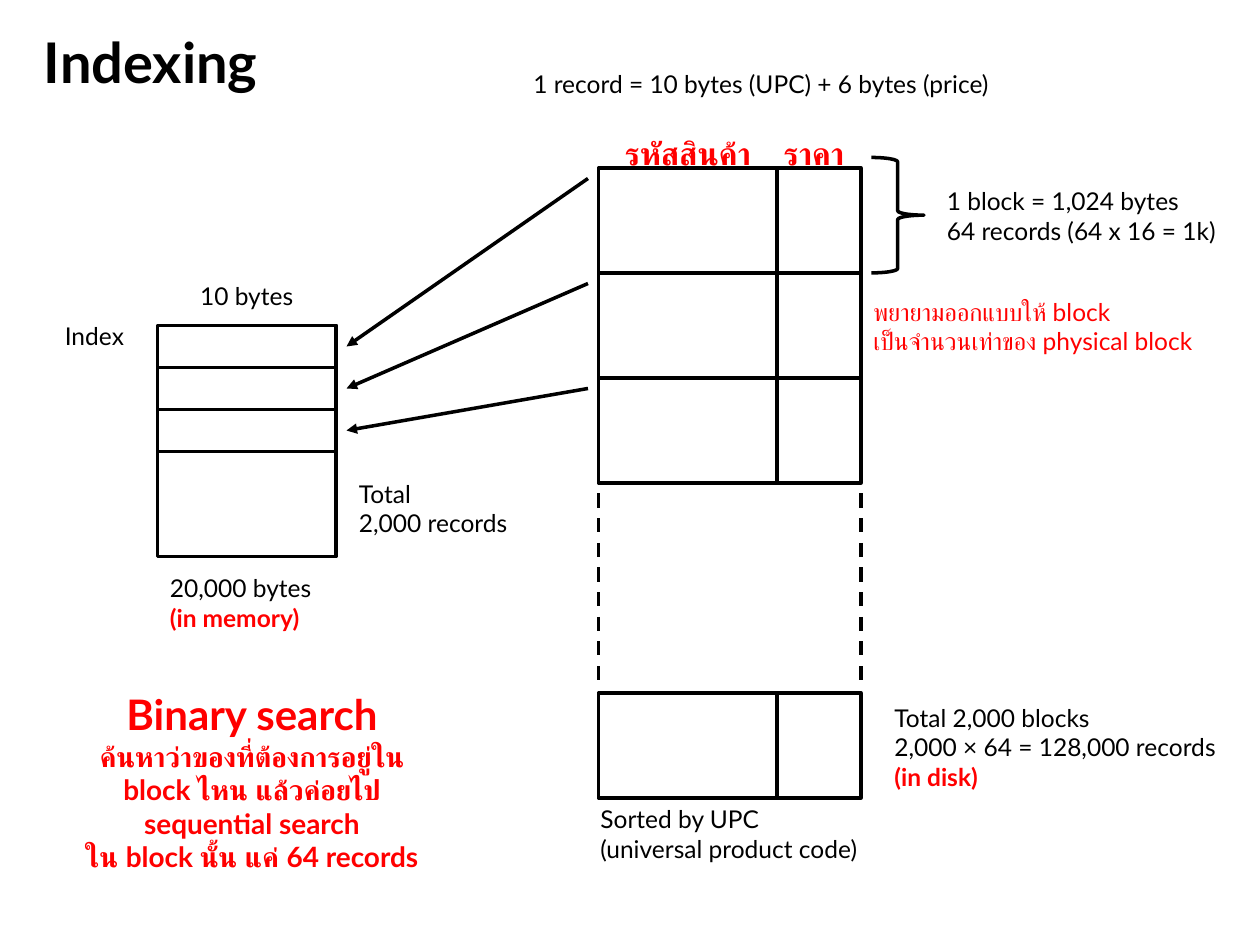
from pptx import Presentation
from pptx import util as u
from pptx.dml.color import RGBColor
from pptx.enum import dml, shapes, text
from pptx.oxml.ns import qn
from lxml import etree

THEME = {
    "font": "Lato", "ink": RGBColor(0, 0, 0), "red": RGBColor(255, 0, 0), "line": 2,
    "styles": {  # name: (size, colour, bold)
        "title": (32, "ink", True),
        "body": (14, "ink", False),
        "note": (14, "red", False),
        "place": (14, "red", True),
        "header": (18, "red", True),
        "method": (24, "red", True),
        "detail": (16, "red", True),
    },
}
LEFT, CENTER = text.PP_ALIGN.LEFT, text.PP_ALIGN.CENTER

# Text: (left, top, width, height), alignment, paragraphs of (style, line)
TEXTS = [
    ((18, 12, 684, 46), LEFT, [[("title", "Indexing")]]),
    ((258, 36, 354, 24), CENTER, [[("body", "1 record = 10 bytes (UPC) + 6 bytes (price)")]]),
    ((534, 103, 174, 41), LEFT, [[("body", "1 block = 1,024 bytes"),
                                  ("body", "64 records (64 x 16 = 1k)")]]),
    ((504, 398, 210, 58), LEFT, [[("body", "Total 2,000 blocks"),
                                  ("body", "2,000 × 64 = 128,000 records"),
                                  ("place", "(in disk)")]]),
    ((336, 456, 204, 41), LEFT, [[("body", "Sorted by UPC"),
                                  ("body", "(universal product code)")]]),
    ((90, 157, 102, 24), CENTER, [[("body", "10 bytes")]]),
    ((18, 180, 72, 24), CENTER, [[("body", "Index")]]),
    ((198, 270, 120, 41), LEFT, [[("body", "Total"), ("body", "2,000 records")]]),
    ((90, 324, 114, 41), LEFT, [[("body", "20,000 bytes"), ("place", "(in memory)")]]),
    ((30, 390, 228, 114), CENTER, [
        [("method", "Binary search")],
        [("detail", "ค้นหาว่าของที่ต้องการอยู่ใน block ไหน แล้วค่อยไป sequential search"),
         ("detail", "ใน block นั้น แค่ 64 records")]]),
    ((348, 73, 90, 29), CENTER, [[("header", "รหัสสินค้า")]]),
    ((420, 73, 90, 29), CENTER, [[("header", "ราคา")]]),
    ((492, 166, 222, 41), LEFT, [[("note", "พยายามออกแบบให้ block")],
                                 [("note", "เป็นจำนวนเท่าของ physical block")]]),
]

# Diagram geometry
CODE_W, PRICE_W, BLOCK_H = 102, 48, 60
BLOCK_X, BLOCK_Y, LAST_Y = 342, 96, 396
INDEX_X, INDEX_Y, INDEX_H, ROW_H = 90, 186, 132, 24
LINKS = 3
GAP = 6


def pts(*values):
    return [u.Pt(v) for v in values]


def apply(obj, values):
    for name, value in values.items():
        setattr(obj, name, value)


def add_outline(s, kind, *box):
    sp = s.shapes.add_shape(kind, *pts(*box))
    sp.shadow.inherit = False
    sp.fill.background()
    sp.line.color.rgb = THEME["ink"]
    sp.line.width = u.Pt(THEME["line"])


def add_line(s, *ends, dashed=False, arrow=False):
    cx = s.shapes.add_connector(shapes.MSO_CONNECTOR.STRAIGHT, *pts(*ends))
    cx.line.color.rgb = THEME["ink"]
    cx.line.width = u.Pt(THEME["line"])
    if dashed:
        cx.line.dash_style = dml.MSO_LINE.DASH
    if arrow:
        etree.SubElement(cx.line._get_or_add_ln(), qn("a:tailEnd"), type="triangle")
    etree.SubElement(cx._element.spPr, qn("a:effectLst"))


def add_text(s, box, align, paragraphs):
    tf = s.shapes.add_textbox(*pts(*box)).text_frame
    apply(tf, {"word_wrap": True, "auto_size": text.MSO_AUTO_SIZE.SHAPE_TO_FIT_TEXT})
    for i, lines in enumerate(paragraphs):
        p = tf.add_paragraph() if i else tf.paragraphs[0]
        p.alignment = align
        for j, (style, line) in enumerate(lines):
            if j:
                p.add_line_break()
            r = p.add_run()
            r.text = line
            size, colour, bold = THEME["styles"][style]
            apply(r.font, {"name": THEME["font"], "size": u.Pt(size), "bold": bold})
            r.font.color.rgb = THEME[colour]


prs = Presentation()
apply(prs, {"slide_width": u.Pt(720), "slide_height": u.Pt(540)})
s = prs.slides.add_slide(prs.slide_layouts[6])
RECT = shapes.MSO_SHAPE.RECTANGLE

# Blocks on disk
block_tops = [BLOCK_Y + i * BLOCK_H for i in range(LINKS)]
for y in block_tops + [LAST_Y]:
    add_outline(s, RECT, BLOCK_X, y, CODE_W, BLOCK_H)
    add_outline(s, RECT, BLOCK_X + CODE_W, y, PRICE_W, BLOCK_H)

# Omitted blocks
for x in (BLOCK_X, BLOCK_X + CODE_W + PRICE_W):
    add_line(s, x, block_tops[-1] + BLOCK_H + GAP, x, LAST_Y - GAP, dashed=True)

# Index in memory, with an arrow from each block to its entry
add_outline(s, RECT, INDEX_X, INDEX_Y, CODE_W, INDEX_H)
for i, y in enumerate(block_tops):
    row_y = INDEX_Y + i * ROW_H
    add_outline(s, RECT, INDEX_X, row_y, CODE_W, ROW_H)
    add_line(s, BLOCK_X - GAP, y + GAP,
             INDEX_X + CODE_W + GAP, row_y + ROW_H / 2, arrow=True)

# Block size brace
add_outline(s, shapes.MSO_SHAPE.RIGHT_BRACE,
            BLOCK_X + CODE_W + PRICE_W + GAP, BLOCK_Y - GAP, 30, BLOCK_H + GAP)

# Labels
for item in TEXTS:
    add_text(s, *item)

prs.save("out.pptx")
